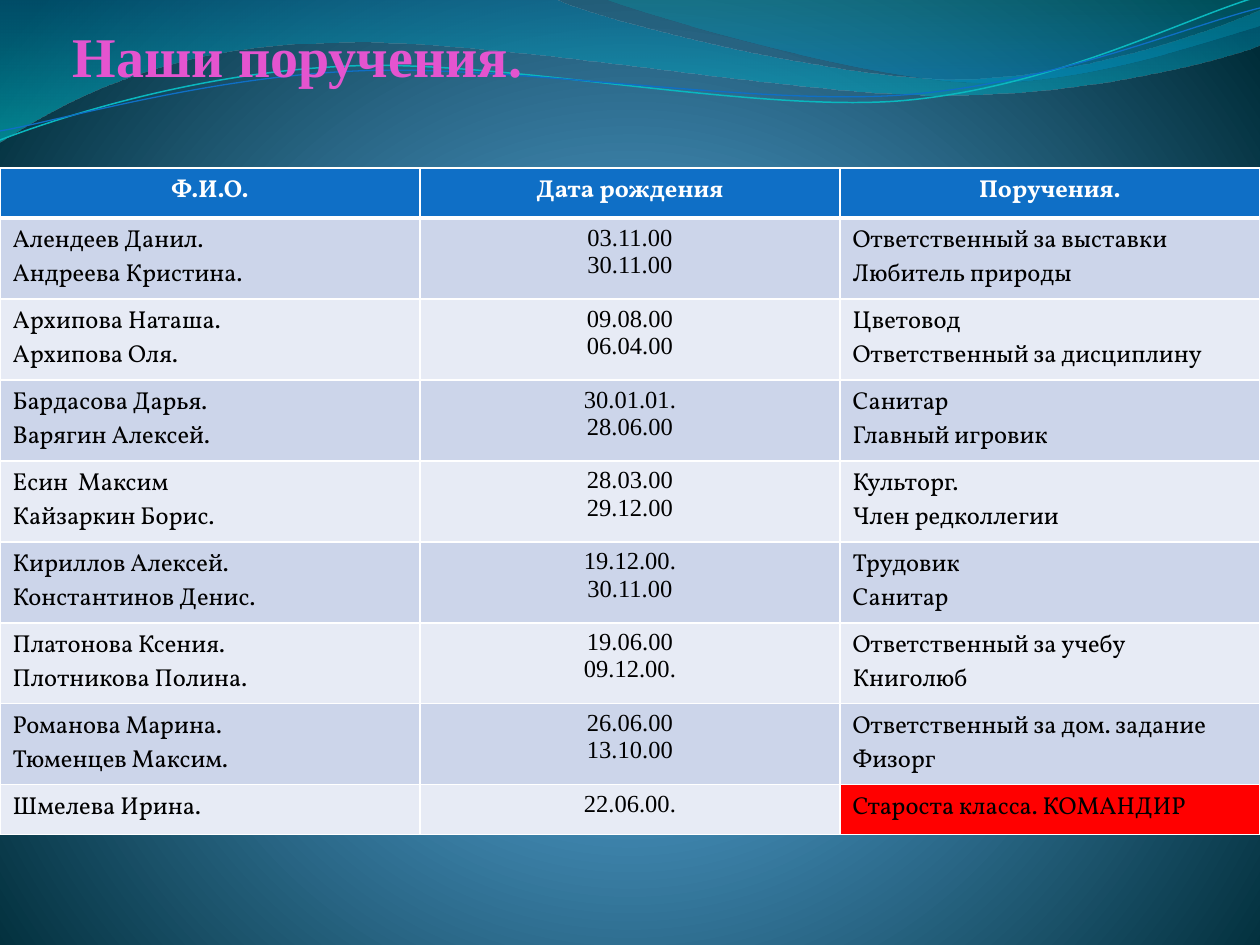
from lxml import etree
from pptx import Presentation
from pptx.dml.color import RGBColor as RGB
from pptx.enum.text import MSO_ANCHOR as Anchor, PP_ALIGN as Align
from pptx.oxml import parse_xml
from pptx.oxml.ns import nsdecls, qn
from pptx.util import Pt

PX = 914400 / 126
WHITE, BLACK, RED = RGB(255, 255, 255), RGB(0, 0, 0), RGB(255, 0, 0)
PINK = RGB(0xE4, 0x54, 0xCF)
BLUE, TEAL = RGB(0x0F, 0x6F, 0xC6), RGB(0x0A, 0xB8, 0xBF)
DARK, PALE = RGB(0xCC, 0xD5, 0xEA), RGB(0xE7, 0xEB, 0xF5)
SKY, STEEL, NIGHT = RGB(0x4A, 0xA0, 0xD6), RGB(0x4C, 0x98, 0xC7), RGB(0, 0x2C, 0x38)
SEA, AQUA = RGB(0, 0x74, 0xA1), RGB(0, 0xC6, 0xCF)
MINT, WATER = RGB(0, 0xA1, 0xA9), RGB(0, 0x8B, 0xBF)
SERIF, BOOK = "Times New Roman", "Vollkorn"
DOWN = '<a:lin ang="5400000" scaled="0"/>'
ROUND = ('<a:path path="circle"><a:fillToRect l="10000" t="110000" '
         'r="10000" b="100000"/></a:path>')

# Outlines: a pair is a corner, six numbers are a Bezier curve
BAND = [(0, 0), (554, -1), (600, 21, 837, 79, 955, 79),
        (1075, 79, 1207, 33, 1260, 11), (1261, 45),
        (1238, 55, 1096, 96, 940, 95), (783, 95, 481, 35, 324, 43),
        (163, 45, 58, 105, -1, 142)]
CREST = [(604, -1), (641, 14, 859, 78, 969, 82),
         (1079, 87, 1211, 40, 1260, 26), (1260, 0)]
UPPER = [(0, 140), (60, 117, 199, 72, 349, 66),
         (498, 59, 747, 112, 898, 101), (1050, 89, 1182, 19, 1257, -3)]
LOWER = [(0, 131), (59, 121, 207, 77, 357, 71),
         (508, 64, 752, 106, 903, 95), (1053, 84, 1187, 26, 1260, 8)]

HEAD = ["Ф.И.О.", "Дата рождения", "Поручения."]
ROWS = [
    ["Алендеев Данил.\nАндреева Кристина.", "03.11.00\n30.11.00",
     "Ответственный за выставки\nЛюбитель природы"],
    ["Архипова Наташа.\nАрхипова Оля.", "09.08.00\n06.04.00",
     "Цветовод\nОтветственный за дисциплину"],
    ["Бардасова Дарья.\nВарягин Алексей.", "30.01.01.\n28.06.00",
     "Санитар\nГлавный игровик"],
    ["Есин  Максим\nКайзаркин Борис.", "28.03.00\n29.12.00",
     "Культорг.\nЧлен редколлегии"],
    ["Кириллов Алексей.\nКонстантинов Денис.", "19.12.00.\n30.11.00",
     "Трудовик\nСанитар"],
    ["Платонова Ксения.\nПлотникова Полина.", "19.06.00\n09.12.00.",
     "Ответственный за учебу\nКниголюб"],
    ["Романова Марина.\nТюменцев Максим.", "26.06.00\n13.10.00",
     "Ответственный за дом. задание\nФизорг"],
    ["Шмелева Ирина.", "22.06.00.", "Староста класса. КОМАНДИР"],
]


def px(n):
    return round(n * PX)


def blend(host, stops, tail):
    """Swap the solid fill of host for a gradient of (place, colour, opacity)."""
    marks = "".join(
        f'<a:gs pos="{at * 1000}"><a:srgbClr val="{hue}">'
        f'<a:alpha val="{part * 1000}"/></a:srgbClr></a:gs>'
        for at, hue, part in stops)
    grad = parse_xml(f'<a:gradFill {nsdecls("a")} rotWithShape="1">'
                     f'<a:gsLst>{marks}</a:gsLst>{tail}</a:gradFill>')
    host.replace(host.find(qn("a:solidFill")), grad)


def bend(shape, path):
    """Join each three lines of a curve into one Bezier segment."""
    lines = iter(shape._element.findall(".//" + qn("a:lnTo")))
    for seg in path[1:]:
        trio = [next(lines) for _ in range(len(seg) // 2)]
        if len(trio) == 3:
            curve = etree.Element(qn("a:cubicBezTo"))
            trio[0].addprevious(curve)
            for line in trio:
                curve.append(line[0])
                line.getparent().remove(line)


def draw(slide, box, path, shut):
    left, top = box
    dots = [(px(seg[i]), px(seg[i + 1]))
            for seg in path for i in range(0, len(seg), 2)]
    pen = slide.shapes.build_freeform(*dots[0])
    pen.add_line_segments(dots[1:], close=shut)
    shape = pen.convert_to_shape(px(left), px(top))
    bend(shape, path)
    shape.shadow.inherit = False
    return shape


def add_waves(slide, box):
    # Filled bands
    for path, stops in (
            (BAND, [(0, SEA, 45), (100, AQUA, 55)]),
            (CREST, [(0, MINT, 30), (80, WATER, 45)])):
        shape = draw(slide, box, path, True)
        shape.line.fill.background()
        shape.fill.solid()
        blend(shape._element.spPr, stops, DOWN)
    # Thin lines
    for path, hue, wide in ((UPPER, TEAL, 0.85), (LOWER, BLUE, 0.75)):
        shape = draw(slide, box, path, False)
        shape.fill.background()
        shape.line.color.rgb = hue
        shape.line.width = Pt(wide)


def style(par, face, size, hue, bold, align=Align.LEFT):
    par.alignment = align
    font = par.font
    font.name, font.size, font.bold = face, Pt(size), bold
    font.color.rgb = hue


def add_title(slide, box):
    frame = slide.shapes.add_textbox(*map(px, box)).text_frame
    frame.word_wrap = True
    frame.vertical_anchor = Anchor.BOTTOM
    frame.margin_left = frame.margin_top = frame.margin_bottom = 0
    frame.margin_right = px(2)
    frame.text = "Наши поручения."
    style(frame.paragraphs[0], SERIF, 32, PINK, True)


def rule(cell, base):
    """Give a cell white borders, with the bottom one base points wide."""
    props = cell._tc.get_or_add_tcPr()
    for i, (side, wide) in enumerate(zip("LRTB", (1, 1, 1, base))):
        line = etree.Element(qn(f"a:ln{side}"), w=str(Pt(wide)))
        fill = etree.SubElement(line, qn("a:solidFill"))
        etree.SubElement(fill, qn("a:srgbClr"), val=str(WHITE))
        props.insert(i, line)


def add_duties(slide, box):
    wide, rows = box[2], [HEAD] + ROWS
    grid = slide.shapes.add_table(len(rows), len(HEAD), *map(px, box)).table
    for col in grid.columns:
        col.width = px(wide / len(HEAD))
    for r, row in enumerate(rows):
        grid.rows[r].height = px(81 if "\n" in row[0] else 50)
        top = r == 0
        for c, text in enumerate(row):
            cell = grid.cell(r, c)
            cell.text = text
            cell.fill.solid()
            cell.fill.fore_color.rgb = BLUE if top else DARK if r % 2 else PALE
            rule(cell, 3 if top else 1)
            date = c == 1
            for par in cell.text_frame.paragraphs:
                style(par, SERIF if date and not top else BOOK, 14,
                      WHITE if top else BLACK, top,
                      Align.CENTER if top or date else Align.LEFT)
    # The class leader stands out
    grid.cell(len(ROWS), 2).fill.fore_color.rgb = RED


def main():
    deck = Presentation()
    deck.slide_width, deck.slide_height = px(1260), px(945)
    slide = deck.slides.add_slide(deck.slide_layouts[6])
    # Background
    slide.background.fill.solid()
    blend(slide._element.find(".//" + qn("p:bgPr")),
          [(0, SKY, 100), (25, STEEL, 100), (100, NIGHT, 100)], ROUND)
    add_waves(slide, (0, 0))
    add_title(slide, (73, 1, 1082, 88))
    add_duties(slide, (0, 168, 1260, 667))
    deck.save("out.pptx")


if __name__ == "__main__":
    main()
